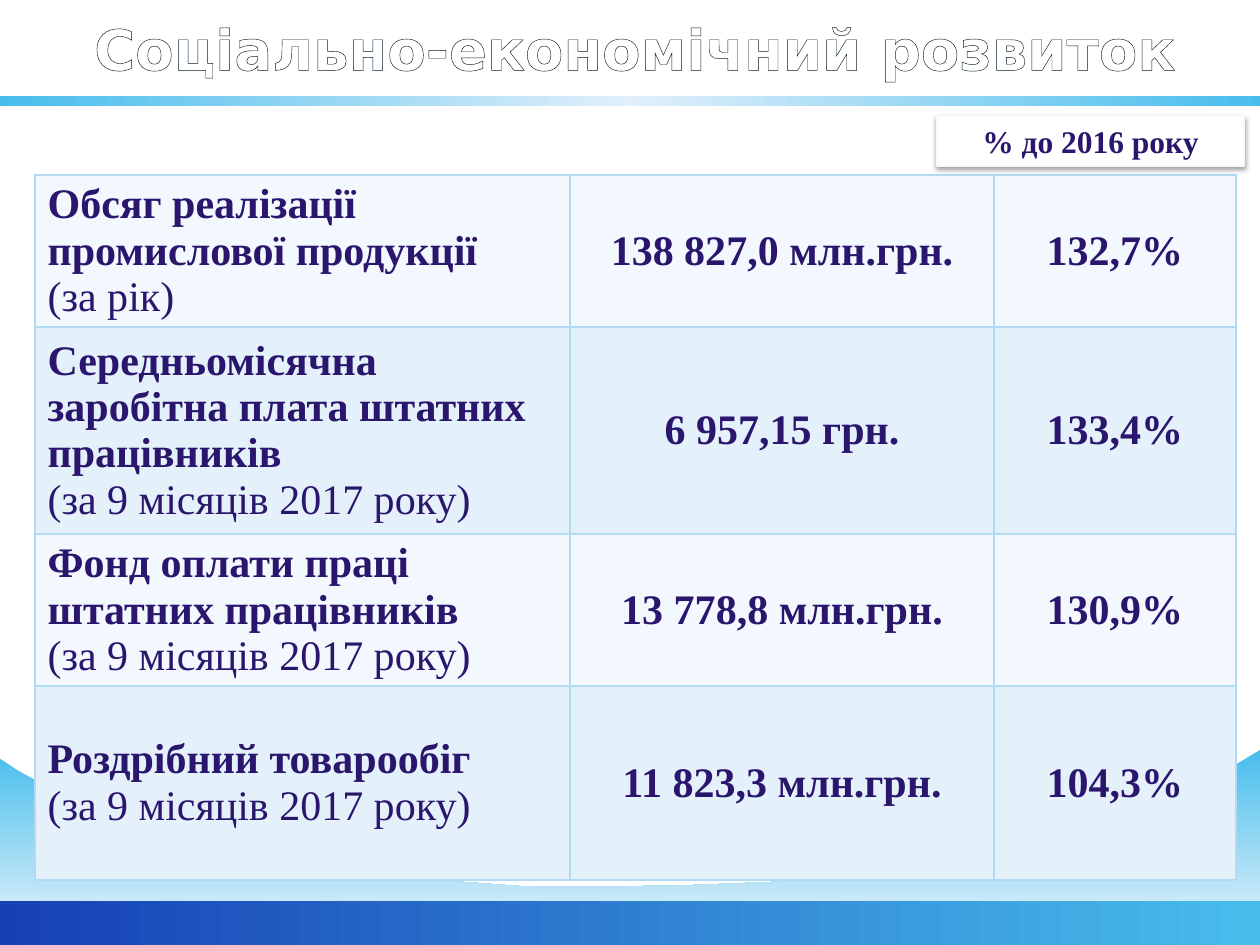
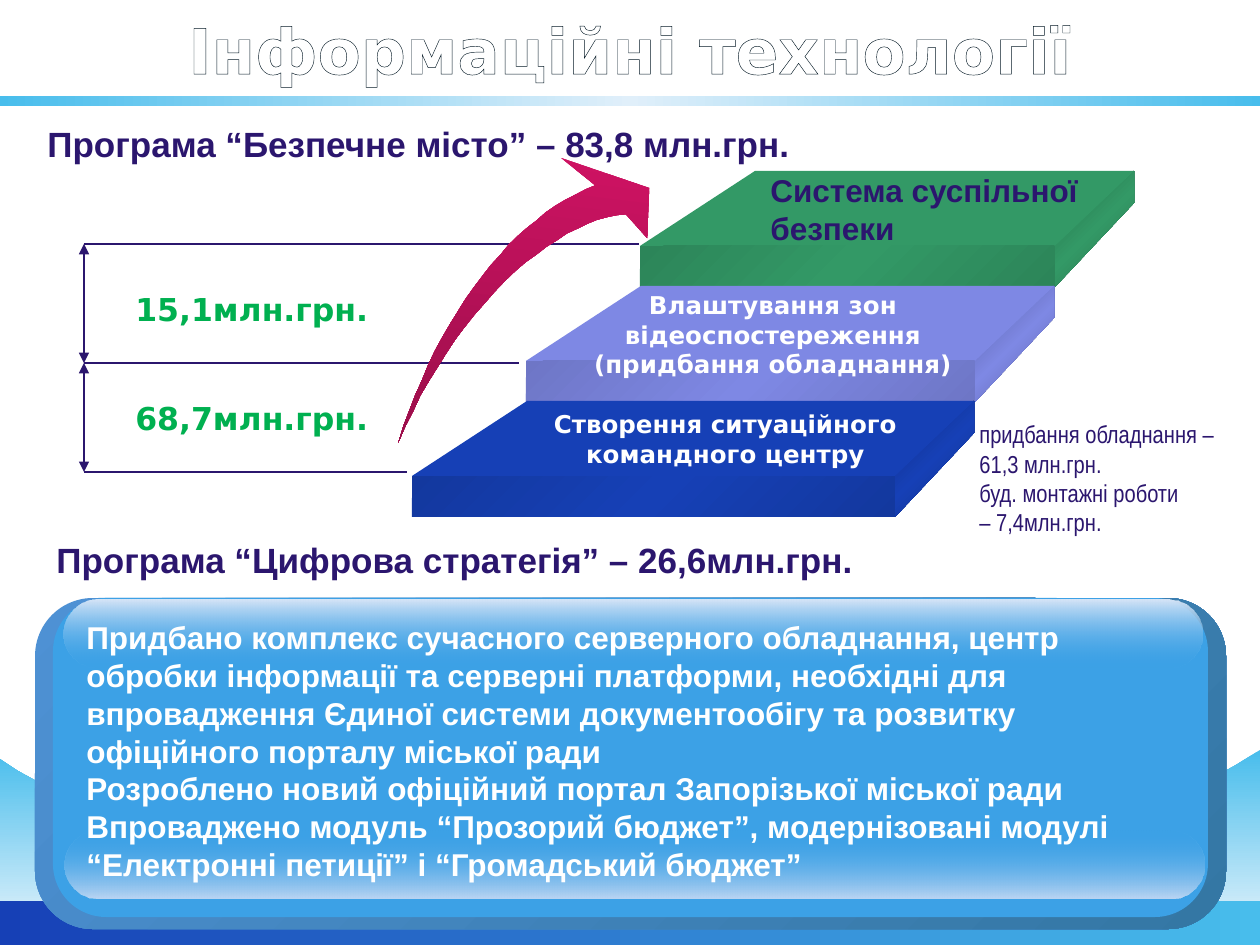
from lxml.etree import SubElement
from pptx import Presentation
from pptx.dml.color import RGBColor
from pptx.enum.shapes import MSO_CONNECTOR, MSO_SHAPE
from pptx.enum.text import MSO_ANCHOR, PP_ALIGN
from pptx.oxml.ns import qn
from pptx.util import Emu, Pt

PX = 914400 / 126
NAVY, WHITE, GREEN = "2B166E", "FFFFFF", "00B050"
SKY, ROYAL = "48BDEC", "1640B6"
SERIF, SANS, NARROW, DISPLAY = "Times New Roman", "Arial", "Arial Narrow", "DejaVu Sans"

WAVE_CURVES = [
    [(1260, 750), (1070, 876), (809, 883), (620, 887)],
    [(620, 887), (431, 891), (140, 854), (0, 759)],
]
WAVE_BASE = [(0, 945), (1260, 945)]
BANDS = [
    ((0, 901, 1260, 45), [(0, ROYAL), (100, SKY)]),
    ((0, 96, 1260, 10), [(0, SKY), (50, "E0EFFA"), (100, SKY)]),
]

ECONOMY_TITLE = "Соціально-економічний розвиток"
COMPARISON = "% до 2016 року"
INDICATORS = [
    ("Обсяг реалізації промислової продукції", "(за рік)", "138 827,0 млн.грн.", "132,7%"),
    ("Середньомісячна заробітна плата штатних працівників", "(за 9 місяців 2017 року)",
     "6 957,15 грн.", "133,4%"),
    ("Фонд оплати праці штатних працівників", "(за 9 місяців 2017 року)",
     "13 778,8 млн.грн.", "130,9%"),
    ("Роздрібний товарообіг", "(за 9 місяців 2017 року)", "11 823,3 млн.грн.", "104,3%"),
]
COLUMN_WIDTHS = [535, 424, 242]
ROW_HEIGHTS = [152, 207, 152, 194]
ROW_FILLS = ["F2F8FD", "E4F1FB"]

IT_TITLE = "Інформаційні технології"
HEADINGS = [
    ("Програма “Безпечне місто” – 83,8 млн.грн.", (35, 116, 883, 55)),
    ("Програма “Цифрова стратегія” – 26,6млн.грн.", (44, 532, 953, 55)),
]
COSTS = [("15,1млн.грн.", (123, 284, 262, 50)), ("68,7млн.грн.", (123, 393, 262, 50))]
STEP_COLOURS = [
    ("339966", "246D49", "2C8559"),
    ("7E88E4", "5A61A3", "6E76C6"),
    (ROYAL, "102E82", "13389E"),
]
STEP_LABELS = [
    ("Система суспільної безпеки", (758, 165, 382, 89), SANS, 18, NAVY, PP_ALIGN.LEFT),
    ("Влаштування зон відеоспостереження (придбання обладнання)", (530, 284, 486, 102),
     DISPLAY, 14, WHITE, PP_ALIGN.CENTER),
    ("Створення ситуаційного командного центру", (512, 403, 427, 72),
     DISPLAY, 14, WHITE, PP_ALIGN.CENTER),
]
SPLIT = ["придбання обладнання – 61,3 млн.грн.", "буд. монтажні роботи", "– 7,4млн.грн."]
RESULTS = [
    "Придбано комплекс сучасного серверного обладнання, центр обробки інформації та "
    "серверні платформи, необхідні для впровадження Єдиної системи документообігу та "
    "розвитку офіційного порталу міської ради",
    "Розроблено новий офіційний портал Запорізької міської ради",
    "Впроваджено модуль “Прозорий бюджет”, модернізовані модулі “Електронні петиції” "
    "і “Громадський бюджет”",
]
LEVEL_YS = [244, 363, 472]
LEVEL_ENDS = [639, 519, 407]
AXIS_X = 84
ARROW_OUTER = [(416, 457), (441, 321), (504, 219), (580, 178)]
ARROW_HEAD = [(543, 155), (634, 174), (638, 224)]
ARROW_INNER = [(614, 203), (542, 217), (454, 321), (416, 457)]
PANEL = [
    ((35, 598, 1191, 331), 0.175, [(0, "4E91D4"), (100, "3477A4")], 45),
    ((53, 598, 1155, 319), 0.167, "3CA1E6", 0),
    ((65, 831, 1139, 67), 0.5, [(0, "3CA1E6", 0), (100, "BDD6F3")], 90),
    ((63, 600, 1139, 67), 0.5, [(0, "D7E5F7"), (100, "3CA1E6", 0)], 90),
]


def px(value):
    return Emu(round(value * PX))


def rgb(value):
    return RGBColor.from_string(value)


def add_colour(parent, value, alpha=100):
    colour = SubElement(parent, qn("a:srgbClr"), val=value)
    if alpha < 100:
        SubElement(colour, qn("a:alpha"), val=str(alpha * 1000))


def paint(shape, fill, angle=0):
    shape.shadow.inherit = False
    shape.line.fill.background()
    if isinstance(fill, str):
        shape.fill.solid()
        shape.fill.fore_color.rgb = rgb(fill)
        return shape
    shape.fill.gradient()
    gradient = shape._element.spPr.find(qn("a:gradFill"))
    for child in list(gradient):
        gradient.remove(child)
    stops = SubElement(gradient, qn("a:gsLst"))
    for position, *colour in fill:
        add_colour(SubElement(stops, qn("a:gs"), pos=str(position * 1000)), *colour)
    SubElement(gradient, qn("a:lin"), ang=str(angle * 60000), scaled="0")
    return shape


def add_block(slide, box, fill, angle=0, preset=MSO_SHAPE.RECTANGLE):
    return paint(slide.shapes.add_shape(preset, *map(px, box)), fill, angle)


def add_outline(slide, points, fill, angle=0):
    builder = slide.shapes.build_freeform(*points[0], scale=PX)
    builder.add_line_segments(points[1:])
    return paint(builder.convert_to_shape(), fill, angle)


def bezier(controls, steps=24):
    points = []
    for i in range(steps + 1):
        t = i / steps
        weights = ((1 - t) ** 3, 3 * t * (1 - t) ** 2, 3 * t * t * (1 - t), t ** 3)
        points.append(tuple(sum(w * c[axis] for w, c in zip(weights, controls))
                            for axis in (0, 1)))
    return points


def write(frame, lines, font, size, colour, bold=True, align=PP_ALIGN.LEFT):
    for i, line in enumerate(lines):
        paragraph = frame.add_paragraph() if i else frame.paragraphs[0]
        paragraph.text = line
        paragraph.alignment = align
        paragraph.font.name = font
        paragraph.font.size = Pt(size)
        paragraph.font.bold = bold
        paragraph.font.color.rgb = rgb(colour)


def add_label(slide, lines, box, *style, wrap=True, **options):
    frame = slide.shapes.add_textbox(*map(px, box)).text_frame
    frame.word_wrap = wrap
    write(frame, lines, *style, **options)


def add_rule(slide, start, end, arrows=False):
    rule = slide.shapes.add_connector(MSO_CONNECTOR.STRAIGHT, *map(px, start + end))
    rule.line.color.rgb = rgb(NAVY)
    rule.line.width = Pt(0.75)
    if arrows:
        line = rule.line._get_or_add_ln()
        for end_tag in ("a:headEnd", "a:tailEnd"):
            SubElement(line, qn(end_tag), type="triangle")
    SubElement(rule._element.spPr, qn("a:effectLst"))


def add_slide(prs, title, box, size):
    slide = prs.slides.add_slide(prs.slide_layouts[5])
    heading = slide.shapes.title
    heading.left, heading.top, heading.width, heading.height = map(px, box)
    frame = heading.text_frame
    frame.vertical_anchor = MSO_ANCHOR.MIDDLE
    write(frame, [title], DISPLAY, size, WHITE, align=PP_ALIGN.CENTER)
    properties = frame.paragraphs[0].runs[0]._r.get_or_add_rPr()
    outline = SubElement(properties, qn("a:ln"), w=str(Pt(0.75)))
    add_colour(SubElement(outline, qn("a:solidFill")), "051925")
    return slide


def decorate_layout(slide):
    wave = [point for curve in WAVE_CURVES for point in bezier(curve)] + WAVE_BASE
    decor = [add_outline(slide, wave, [(0, SKY), (100, "EEF6FC")], 90)]
    decor += [add_block(slide, box, stops) for box, stops in BANDS]
    for position, part in enumerate(decor, 2):
        slide.slide_layout.shapes.element.insert(position, part._element)


def border_cell(cell):
    properties = cell._tc.get_or_add_tcPr()
    for position, side in enumerate(("a:lnL", "a:lnR", "a:lnT", "a:lnB")):
        line = SubElement(properties, qn(side), w=str(Pt(1)))
        add_colour(SubElement(line, qn("a:solidFill")), "B1DBF4")
        properties.insert(position, line)


def add_indicators(slide):
    table = slide.shapes.add_table(len(INDICATORS), len(COLUMN_WIDTHS), px(35), px(175),
                                   px(sum(COLUMN_WIDTHS)), px(sum(ROW_HEIGHTS))).table
    for column, width in zip(table.columns, COLUMN_WIDTHS):
        column.width = px(width)
    for i, (name, period, *figures) in enumerate(INDICATORS):
        table.rows[i].height = px(ROW_HEIGHTS[i])
        for j, lines in enumerate([[name, period]] + [[figure] for figure in figures]):
            cell = table.cell(i, j)
            cell.fill.solid()
            cell.fill.fore_color.rgb = rgb(ROW_FILLS[i % 2])
            cell.vertical_anchor = MSO_ANCHOR.MIDDLE
            write(cell.text_frame, lines, SERIF, 24, NAVY,
                  align=PP_ALIGN.CENTER if j else PP_ALIGN.LEFT)
            border_cell(cell)
        table.cell(i, 0).text_frame.paragraphs[1].font.bold = False


def add_comparison(slide):
    note = add_block(slide, (937, 116, 307, 50), WHITE)
    note.line.color.rgb = rgb("F9F9F9")
    note.line.width = Pt(0.75)
    write(note.text_frame, [COMPARISON], SERIF, 18, NAVY, align=PP_ALIGN.CENTER)
    effects = note._element.spPr.find(qn("a:effectLst"))
    shadow = SubElement(effects, qn("a:outerShdw"), blurRad=str(Pt(3.1)),
                        dist=str(Pt(1.6)), dir="5400000", rotWithShape="0")
    add_colour(shadow, "000000", 38)


def add_stairs(slide):
    for i, (face, edge, front) in enumerate(STEP_COLOURS):
        left, right, y = 640 - 114 * i, 1055 - 80 * i, 246 + 115 * i
        back, back_y = right + 79, y - 75
        add_outline(slide, [(back, y - 43), (right, y + 41), (right, y), (back, back_y)],
                    [(0, edge), (50, face), (100, edge)], 45)
        add_outline(slide, [(right, y), (left, y), (left + 115, back_y), (back, back_y)], face)
        add_block(slide, (left, y, right - left, 41),
                  [(0, front), (50, face), (100, front)], 45)
    arrow = add_outline(slide, bezier(ARROW_OUTER) + ARROW_HEAD + bezier(ARROW_INNER),
                        [(0, "D11364"), (100, "960E48")], 90)
    arrow.rotation = 7


def main():
    prs = Presentation()
    prs.slide_width, prs.slide_height = px(1260), px(945)

    economy = add_slide(prs, ECONOMY_TITLE, (25, 0, 1221, 96), 32)
    decorate_layout(economy)
    add_indicators(economy)
    add_comparison(economy)

    technology = add_slide(prs, IT_TITLE, (63, 0, 1134, 98), 36)
    for y, end in zip(LEVEL_YS, LEVEL_ENDS):
        add_rule(technology, (end, y), (AXIS_X, y))
    for top, bottom in zip(LEVEL_YS, LEVEL_YS[1:]):
        add_rule(technology, (AXIS_X, top), (AXIS_X, bottom), arrows=True)
    for cost, box in COSTS:
        add_label(technology, [cost], box, DISPLAY, 18, GREEN, wrap=False)
    add_stairs(technology)
    for heading, box in HEADINGS:
        add_label(technology, [heading], box, SANS, 20, NAVY)
    for label, box, font, size, colour, align in STEP_LABELS:
        add_label(technology, [label], box, font, size, colour, align=align)
    for box, radius, fill, angle in PANEL:
        layer = add_block(technology, box, fill, angle, MSO_SHAPE.ROUNDED_RECTANGLE)
        layer.adjustments[0] = radius
    add_label(technology, RESULTS, (74, 612, 1133, 280), SANS, 18, WHITE)
    add_label(technology, SPLIT, (967, 413, 293, 131), NARROW, 14, NAVY, bold=False)

    prs.save("out.pptx")


if __name__ == "__main__":
    main()
